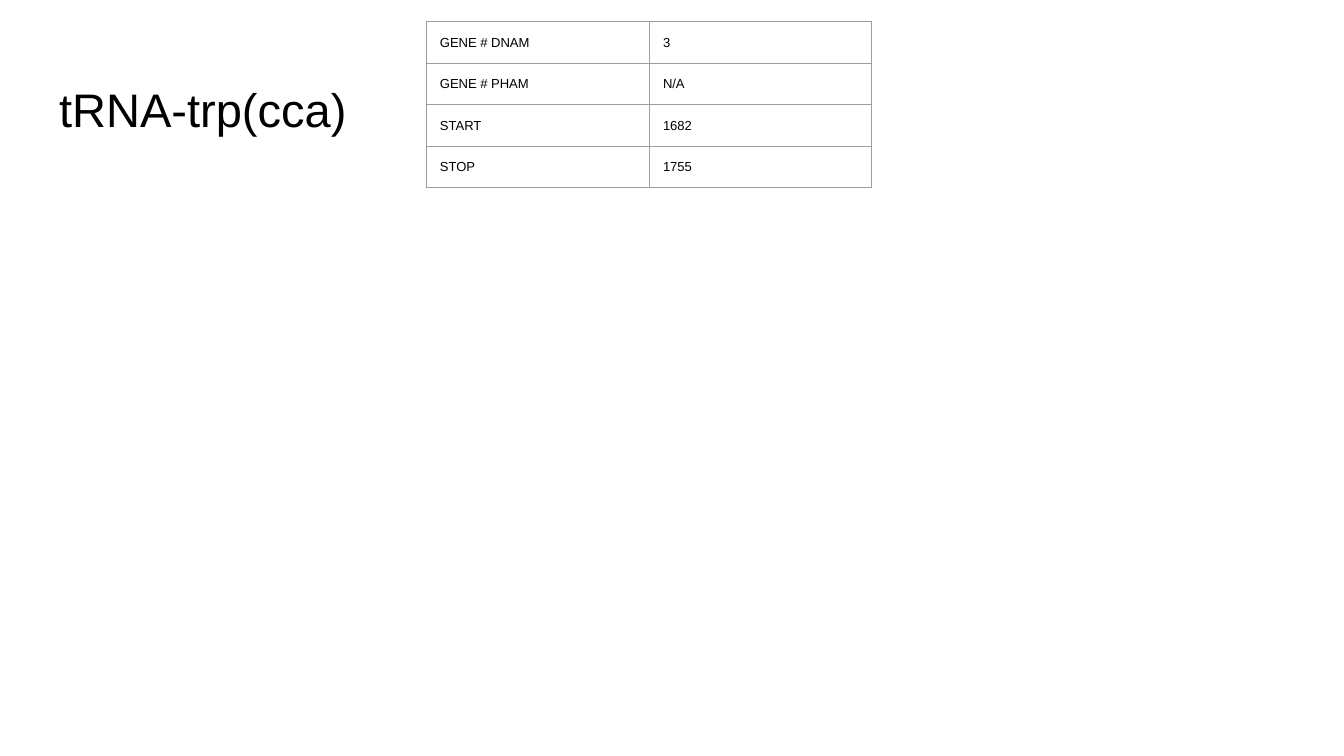
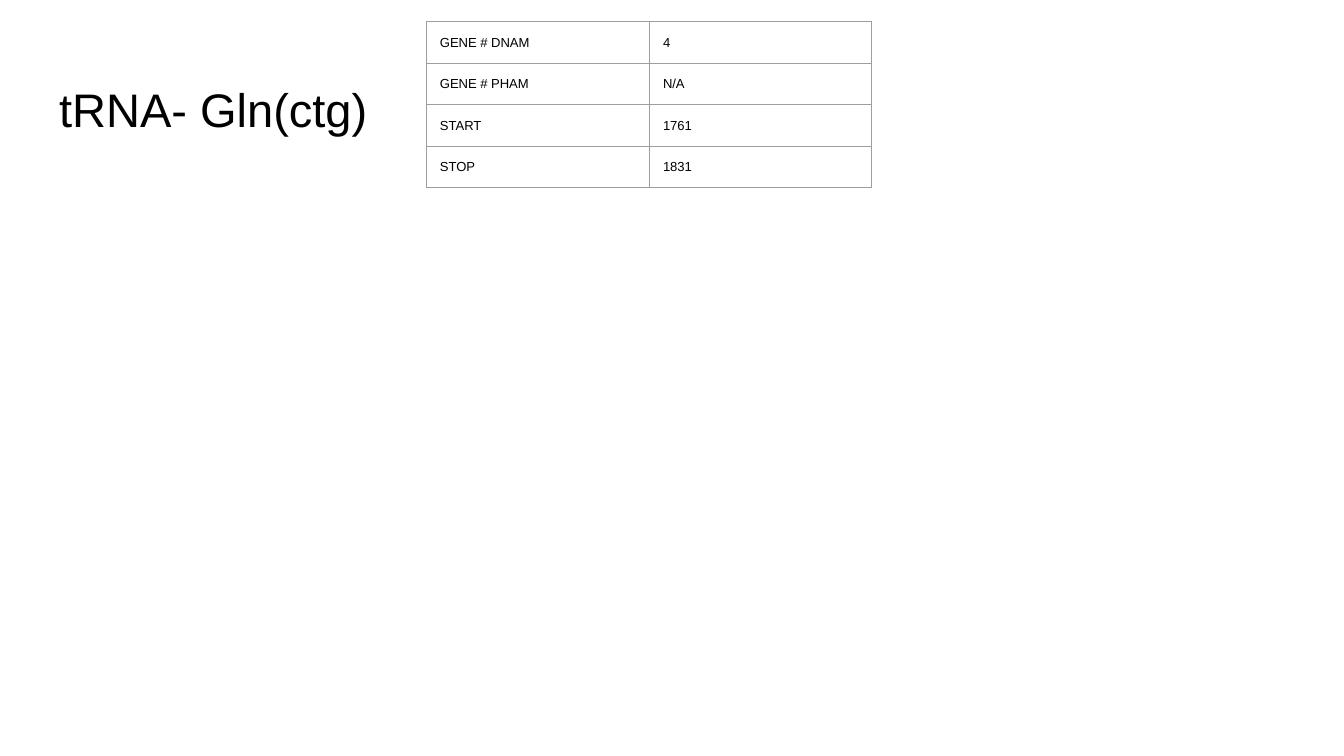
from dataclasses import dataclass

from lxml import etree
from pptx import Presentation
from pptx.dml.color import RGBColor
from pptx.enum import text
from pptx.oxml import ns
from pptx.util import Pt


@dataclass(frozen=True)
class Theme:
    font: str = "Arial"
    ink: str = "000000"
    rule: str = "9E9E9E"
    paper: str = "FFFFFF"
    title: float = 25.2
    cell: float = 7
    line: float = 0.75
    inset: float = 7.2


theme = Theme()


def write(frame, words, size):
    frame.text = words
    para = frame.paragraphs[0]
    para.alignment = text.PP_ALIGN.LEFT
    para.font.name = theme.font
    para.font.size = Pt(size)
    para.font.color.rgb = RGBColor.from_string(theme.ink)


def rule(cell):
    """Draw all four borders of a table cell."""
    props = cell._tc.get_or_add_tcPr()
    for side in ("lnL", "lnR", "lnT", "lnB"):
        line = etree.SubElement(props, ns.qn(f"a:{side}"), w=str(Pt(theme.line)))
        fill = etree.SubElement(line, ns.qn("a:solidFill"))
        etree.SubElement(fill, ns.qn("a:srgbClr"), val=theme.rule)


labels = ("GENE # DNAM", "GENE # PHAM", "START", "STOP")
genes = (
    ("tRNA-trp(cca)", ("3", "N/A", "1682", "1755")),
    ("tRNA- Gln(ctg)", ("4", "N/A", "1761", "1831")),
)
widths = (119.5, 118.8)
height = 20.9

deck = Presentation()
deck.slide_width, deck.slide_height = Pt(720), Pt(405)
layout = deck.slide_layouts.get_by_name("Title Only")
back = deck.slide_master.background.fill
back.solid()
back.fore_color.rgb = RGBColor.from_string(theme.paper)

for name, values in genes:
    slide = deck.slides.add_slide(layout)

    title = slide.shapes.title
    title.left, title.top = Pt(24.5), Pt(35.3)
    title.width, title.height = Pt(671), Pt(45.4)
    frame = title.text_frame
    frame.margin_left = frame.margin_right = Pt(theme.inset)
    frame.margin_top = frame.margin_bottom = Pt(theme.inset)
    frame.vertical_anchor = text.MSO_ANCHOR.MIDDLE
    frame.auto_size = text.MSO_AUTO_SIZE.NONE
    frame.word_wrap = True
    write(frame, name, theme.title)

    table = slide.shapes.add_table(
        len(labels), len(widths), Pt(228.5), Pt(11.7),
        Pt(sum(widths)), Pt(height * len(labels))).table
    table.first_row = table.horz_banding = False
    for col, width in zip(table.columns, widths):
        col.width = Pt(width)
    for row, pair in zip(table.rows, zip(labels, values)):
        row.height = Pt(height)
        for cell, words in zip(row.cells, pair):
            cell.margin_left = cell.margin_right = Pt(theme.inset)
            cell.margin_top = cell.margin_bottom = Pt(theme.inset)
            rule(cell)
            cell.fill.background()
            write(cell.text_frame, words, theme.cell)

deck.save("out.pptx")
